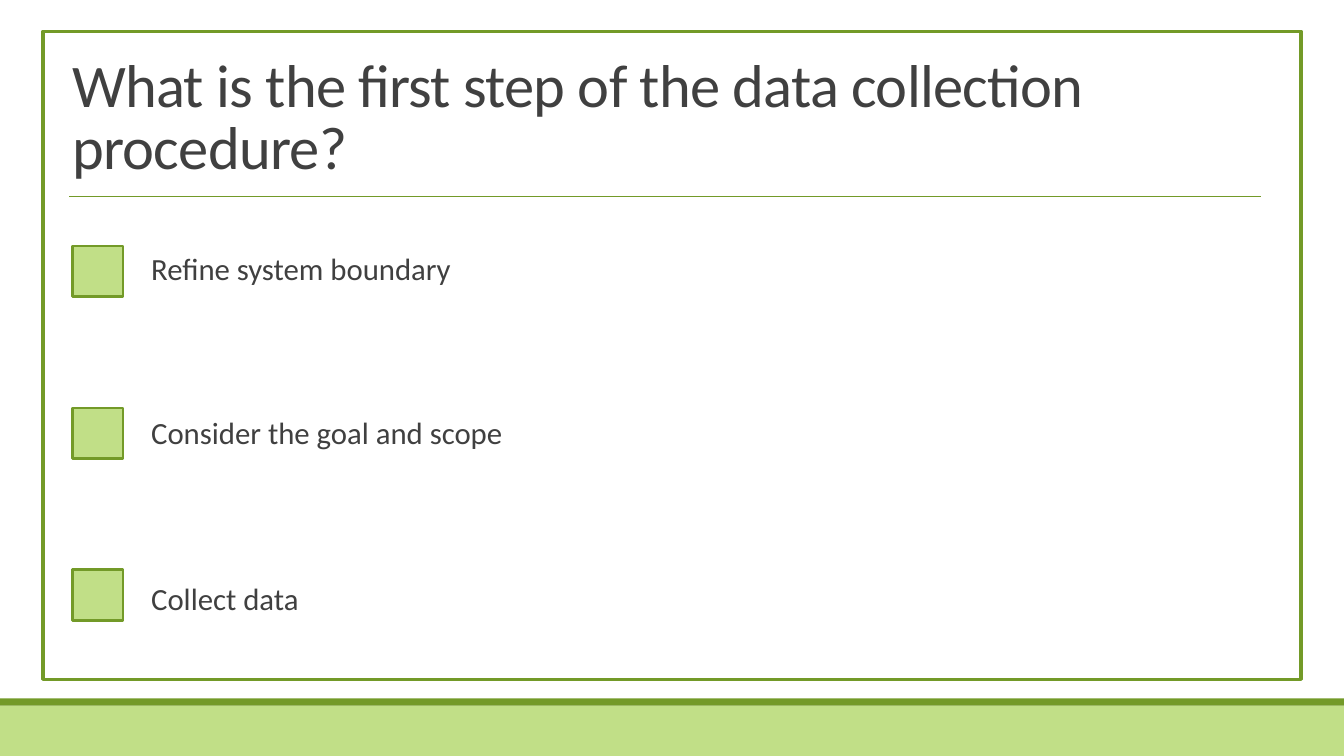
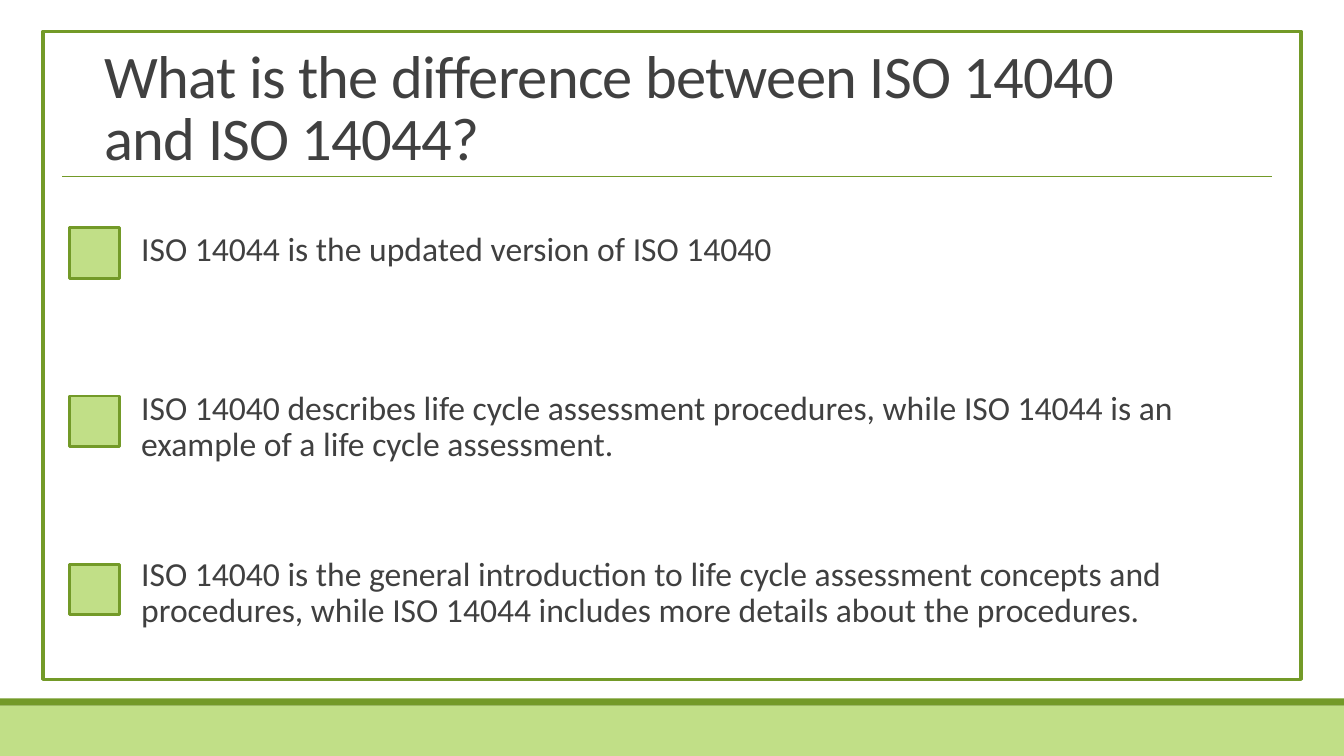
from dataclasses import dataclass

from pptx import Presentation
from pptx.dml.color import RGBColor
from pptx.enum.shapes import MSO_CONNECTOR, MSO_SHAPE
from pptx.enum.text import MSO_ANCHOR
from pptx.oxml.ns import qn
from pptx.util import Cm, Pt
from lxml.etree import SubElement

LIGHT_GREEN = RGBColor(0xC1, 0xDF, 0x87)
DARK_GREEN = RGBColor(0x73, 0x9A, 0x28)
TEXT_GRAY = RGBColor(0x40, 0x40, 0x40)

PAGE_WIDTH, PAGE_HEIGHT = 33.87, 19.05
BAND_HEIGHT, STRIPE_HEIGHT = 1.27, 0.18
CHECKBOX_SIZE = 1.27
ANSWER_WIDTH, ANSWER_HEIGHT = 27.48, 2.4

TITLE_FORMAT = {"size": Pt(43.2), "name": "Calibri"}
TITLE_SPACING = {"line_spacing": 0.85}
ANSWER_SPACING = {"line_spacing": 0.9, "space_after": Pt(2)}
ANSWER_MARGINS = {"margin_left": 0, "margin_right": 0}


@dataclass
class Question:
    title: str
    title_box: tuple       # left, top, width, height
    rule: tuple            # left, top, width
    checkbox_left: float
    answer_left: float
    first_top: float
    step: float
    text_size: float
    answers: tuple         # wording, offset of the text below its checkbox


QUESTIONS = (
    Question(
        "What is the first step of the data collection procedure?",
        (1.57, 1.02, 31.5, 3.68), (1.75, 4.95, 30.02),
        1.83, 3.81, 6.2, 4.08, 22,
        (("Refine system boundary", 0.07),
         ("Consider the goal and scope", 0.13),
         ("Collect data", 0.22))),
    Question(
        "What is the difference between ISO 14040 and ISO 14044?",
        (2.39, 1.07, 27.94, 3.4), (1.57, 4.45, 30.48),
        1.75, 3.56, 5.74, 4.24, 24,
        (("ISO 14044 is the updated version of ISO 14040", 0),
         ("ISO 14040 describes life cycle assessment procedures, while "
          "ISO 14044 is an example of a life cycle assessment.", -0.25),
         ("ISO 14040 is the general introduction to life cycle assessment "
          "concepts and procedures, while ISO 14044 includes more details "
          "about the procedures.", -0.3))),
)


def apply_format(target, values):
    for name, value in values.items():
        setattr(target, name, value)


def add_rectangle(page, box, fill=None, line_width=None):
    shape = page.shapes.add_shape(MSO_SHAPE.RECTANGLE, *map(Cm, box))
    shape.shadow.inherit = False
    if fill is None:
        shape.fill.background()
    else:
        shape.fill.solid()
        shape.fill.fore_color.rgb = fill
    if line_width is None:
        shape.line.fill.background()
    else:
        shape.line.color.rgb = DARK_GREEN
        shape.line.width = Pt(line_width)


def add_text(page, box, text, font, spacing, frame_format):
    frame = page.shapes.add_textbox(*map(Cm, box)).text_frame
    frame.word_wrap = True
    apply_format(frame, frame_format)
    para = frame.paragraphs[0]
    apply_format(para, spacing)
    span = para.add_run()
    span.text = text
    apply_format(span.font, font)
    span.font.color.rgb = TEXT_GRAY
    return span


def add_background(page):
    # Bottom band with its stripe, and the frame around the content
    band_top = PAGE_HEIGHT - BAND_HEIGHT
    add_rectangle(page, (0, band_top, PAGE_WIDTH, BAND_HEIGHT), LIGHT_GREEN)
    add_rectangle(page, (0, band_top - STRIPE_HEIGHT, PAGE_WIDTH, STRIPE_HEIGHT),
                  DARK_GREEN)
    add_rectangle(page, (1.09, 0.79, 31.7, 16.33), line_width=2.5)


def add_title(page, box, text, rule):
    span = add_text(page, box, text, TITLE_FORMAT, TITLE_SPACING,
                    {"vertical_anchor": MSO_ANCHOR.BOTTOM})
    span.font._element.set("spc", "-50")

    # Rule under the title
    left, top, width = rule
    line = page.shapes.add_connector(MSO_CONNECTOR.STRAIGHT, Cm(left), Cm(top),
                                     Cm(left + width), Cm(top))
    line.line.color.rgb = DARK_GREEN
    line.line.width = Pt(1)
    SubElement(line._element.spPr, qn("a:effectLst"))


def add_answers(page, question):
    font = {"size": Pt(question.text_size), "name": "Calibri"}
    for index, (text, offset) in enumerate(question.answers):
        top = question.first_top + index * question.step
        add_rectangle(page, (question.checkbox_left, top, CHECKBOX_SIZE, CHECKBOX_SIZE),
                      LIGHT_GREEN, 2)
        add_text(page, (question.answer_left, top + offset, ANSWER_WIDTH, ANSWER_HEIGHT),
                 text, font, ANSWER_SPACING, ANSWER_MARGINS)


def add_question_page(deck, question):
    page = deck.slides.add_slide(deck.slide_layouts[6])
    add_background(page)
    add_title(page, question.title_box, question.title, question.rule)
    add_answers(page, question)


def main():
    deck = Presentation()
    deck.slide_width, deck.slide_height = Cm(PAGE_WIDTH), Cm(PAGE_HEIGHT)
    for question in QUESTIONS:
        add_question_page(deck, question)
    deck.save("out.pptx")


if __name__ == "__main__":
    main()
